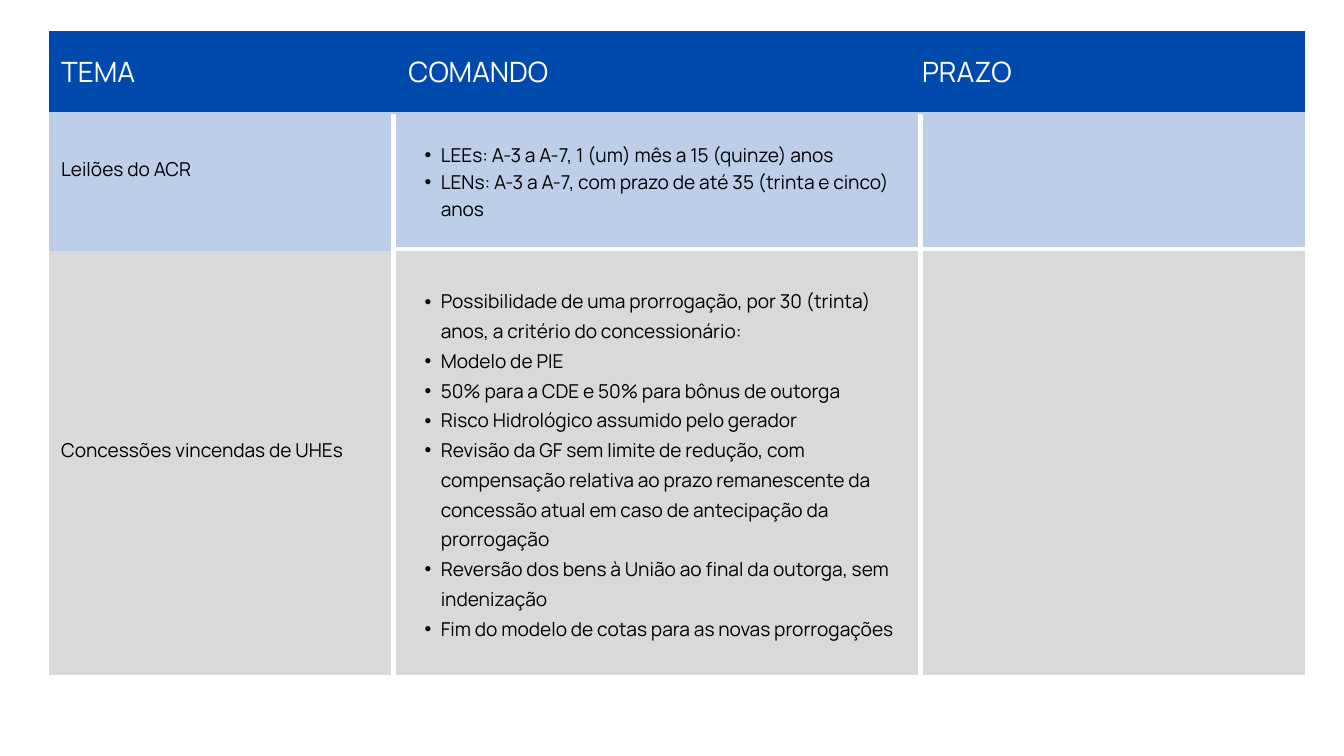
from lxml.etree import SubElement
from pptx import Presentation
from pptx.dml.color import RGBColor
from pptx.enum.shapes import MSO_CONNECTOR, MSO_SHAPE
from pptx.enum.text import MSO_ANCHOR
from pptx.oxml.ns import qn
from pptx.util import Cm, Pt

HEADS = ["TEMA", "COMANDO", "PRAZO"]
TOPICS = [
    ("Leilões do ACR", [
        "LEEs: A-3 a A-7, 1 (um) mês a 15 (quinze) anos",
        "LENs: A-3 a A-7, com prazo de até 35 (trinta e cinco) anos",
    ]),
    ("Concessões vincendas de UHEs", [
        "Possibilidade de uma prorrogação, por 30 (trinta) anos, "
        "a critério do concessionário:",
        "Modelo de PIE",
        "50% para a CDE e 50% para bônus de outorga",
        "Risco Hidrológico assumido pelo gerador",
        "Revisão da GF sem limite de redução, com compensação relativa ao prazo "
        "remanescente da concessão atual em caso de antecipação da prorrogação",
        "Reversão dos bens à União ao final da outorga, sem indenização",
        "Fim do modelo de cotas para as novas prorrogações",
    ]),
]

THEME = {
    "font": "Manrope",
    "head": 30, "body": 20.5,
    "white": RGBColor(255, 255, 255),
    "black": RGBColor(0, 0, 0),
    "blue": RGBColor(0x00, 0x4A, 0xAD),
    "bands": [RGBColor(0xBC, 0xCE, 0xE8), RGBColor(0xD9, 0xD9, 0xD9)],
    "leads": [28.6, 31.9],  # line spacing of the bullets in each row
}

WIDTH, HEIGHT = 50.8, 28.58
LEFT, TOP = 1.85, 1.17
COLS = [13.13, 19.41, 14.94]
ROWS = [3.07, 5.26, 16.03]
PAD = 0.46
LIFT = 1.0  # extra bottom margin that raises the topic names
BAR = 0.13


def style(cell, fill, low=PAD):
    """Set margins and fill, and take away the borders."""
    cell.margin_left = cell.margin_right = cell.margin_top = Cm(PAD)
    cell.margin_bottom = Cm(low)
    cell.vertical_anchor = MSO_ANCHOR.MIDDLE
    props = cell._tc.get_or_add_tcPr()
    for side in ("L", "R", "T", "B"):
        line = SubElement(props, qn(f"a:ln{side}"), w="0")
        SubElement(line, qn("a:noFill"))
    cell.fill.solid()
    cell.fill.fore_color.rgb = fill


def write(frame, lines, size=THEME["body"], color=THEME["black"], lead=28.6,
          bullet=False):
    for i, line in enumerate(lines):
        para = frame.paragraphs[0] if i == 0 else frame.add_paragraph()
        para.line_spacing = Pt(lead)
        if bullet:
            para.level = 1
            props = para._p.get_or_add_pPr()
            props.set("marL", str(Cm(1.22)))
            props.set("indent", str(Cm(-0.61)))
            SubElement(props, qn("a:buFont"), typeface="Arial")
            SubElement(props, qn("a:buChar"), char="•")
        run = para.add_run()
        run.text = line
        run.font.name = THEME["font"]
        run.font.size = Pt(size)
        run.font.color.rgb = color


def add_grid(slide):
    frame = slide.shapes.add_table(len(ROWS), len(COLS), Cm(LEFT), Cm(TOP),
                                   Cm(sum(COLS)), Cm(sum(ROWS)))
    table = frame.table
    table.first_row = table.horz_banding = False
    for col, width in zip(table.columns, COLS):
        col.width = Cm(width)
    for row, height in zip(table.rows, ROWS):
        row.height = Cm(height)

    for c, head in enumerate(HEADS):
        cell = table.cell(0, c)
        style(cell, THEME["blue"])
        write(cell.text_frame, [head], size=THEME["head"],
              color=THEME["white"], lead=42)

    bands = zip(TOPICS, THEME["bands"], THEME["leads"])
    for r, ((topic, items), fill, lead) in enumerate(bands, 1):
        name, order, term = table.rows[r].cells
        style(name, fill, low=PAD + LIFT)
        style(order, fill)
        style(term, fill)
        write(name.text_frame, [topic])
        write(order.text_frame, items, lead=lead, bullet=True)


def add_gaps(slide):
    """Draw the white strips between the columns and between the rows."""
    top = 4.34
    starts = [14.81, 34.72]
    for x in starts:
        bar = slide.shapes.add_shape(MSO_SHAPE.RECTANGLE, Cm(x), Cm(top),
                                     Cm(BAR), Cm(HEIGHT - top))
        bar.shadow.inherit = False
        bar.fill.solid()
        bar.fill.fore_color.rgb = THEME["white"]
        bar.line.color.rgb = THEME["white"]
        bar.line.width = Pt(2)

    y = Cm(9.42)
    rule = slide.shapes.add_connector(MSO_CONNECTOR.STRAIGHT, Cm(starts[0]), y,
                                      Cm(WIDTH), y)
    rule.line.color.rgb = THEME["white"]
    rule.line.width = Pt(3.75)
    SubElement(rule._element.spPr, qn("a:effectLst"))


def main():
    deck = Presentation()
    deck.slide_width, deck.slide_height = Cm(WIDTH), Cm(HEIGHT)
    slide = deck.slides.add_slide(deck.slide_layouts[6])
    add_grid(slide)
    add_gaps(slide)
    deck.save("out.pptx")


if __name__ == "__main__":
    main()
